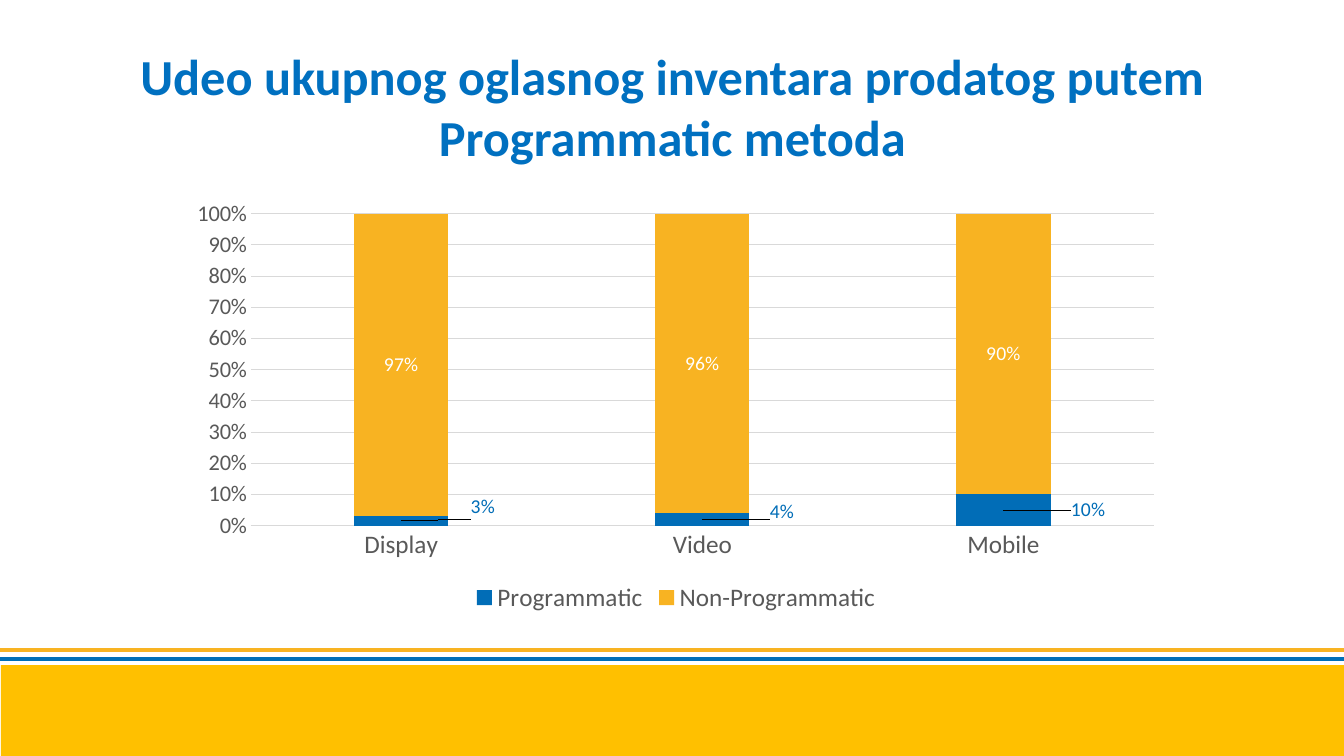
from lxml import etree
from pptx import Presentation
from pptx import util as u
from pptx.chart.data import CategoryChartData
from pptx.dml.color import RGBColor
from pptx.enum import chart as ch, shapes, text
from pptx.oxml import ns

PX = 914400 / 100.8
FONT = "Calibri"
GREY, RULE = "595959", "D9D9D9"
BLUE, GOLD = "016DB7", "F8B322"


def px(n):
    """Turn pixels into EMU."""
    return u.Emu(round(n * PX))


def rgb(value):
    """Turn a hex string into a colour."""
    return RGBColor.from_string(value)


def style(font, size, color, bold=False):
    """Set the face, size and colour of a font."""
    font.name, font.size, font.bold = FONT, u.Pt(size), bold
    font.color.rgb = rgb(color)


def add_layout(parent, index, **values):
    """Insert a manual layout into a chart element."""
    for old in parent.findall(ns.qn("c:layout")):
        parent.remove(old)
    layout = etree.Element(ns.qn("c:layout"))
    manual = etree.SubElement(layout, ns.qn("c:manualLayout"))
    for name, value in values.items():
        etree.SubElement(manual, ns.qn("c:" + name)).set("val", str(value))
    parent.insert(index, layout)


def add_title(s, x, y, w, h):
    """Place the centred heading in its box."""
    tf = s.shapes.add_textbox(px(x), px(y), px(w), px(h)).text_frame
    tf.word_wrap = True
    tf.margin_left = tf.margin_right = tf.margin_top = tf.margin_bottom = 0
    tf.vertical_anchor = text.MSO_ANCHOR.MIDDLE
    p = tf.paragraphs[0]
    p.alignment = text.PP_ALIGN.CENTER
    r = p.add_run()
    r.text = "Udeo ukupnog oglasnog inventara prodatog putem Programmatic metoda"
    style(r.font, 36, "0070C0", True)


def add_share_chart(s, x, y, w, h):
    """Place the stacked share chart in its box."""
    data = CategoryChartData(number_format="0%")
    data.categories = ["Display", "Video", "Mobile"]
    data.add_series("Programmatic", [0.03, 0.04, 0.1])
    data.add_series("Non-Programmatic", [0.97, 0.96, 0.9])
    chart = s.shapes.add_chart(ch.XL_CHART_TYPE.COLUMN_STACKED_100,
                               px(x), px(y), px(w), px(h), data).chart
    style(chart.font, 10, "000000")
    chart.has_title = False
    chart.has_legend = True
    chart.legend.position = ch.XL_LEGEND_POSITION.BOTTOM
    chart.legend.include_in_layout = False
    style(chart.legend.font, 18, GREY)

    cat, val = chart.category_axis, chart.value_axis
    for axis, size in ((cat, 18), (val, 16)):
        axis.major_tick_mark = axis.minor_tick_mark = ch.XL_TICK_MARK.NONE
        style(axis.tick_labels.font, size, GREY)
    val.minimum_scale, val.maximum_scale, val.major_unit = 0, 1, 0.1
    val.tick_labels.number_format = "0%"
    val.tick_labels.number_format_is_linked = False
    val.format.line.fill.background()
    val.has_major_gridlines = True
    for line in (cat.format.line, val.major_gridlines.format.line):
        line.color.rgb, line.width = rgb(RULE), u.Pt(0.75)

    plot = chart.plots[0]
    plot.gap_width, plot.overlap, plot.vary_by_categories = 219, 100, False
    for series, fill, color in zip(plot.series, (BLUE, GOLD), (BLUE, "FFFFFF")):
        series.format.fill.solid()
        series.format.fill.fore_color.rgb = rgb(fill)
        labels = series.data_labels
        labels.show_value = True
        labels.number_format, labels.number_format_is_linked = "0%", False
        labels.position = ch.XL_LABEL_POSITION.CENTER
        style(labels.font, 14, color)

    shifts = [(82, -14), (80, -8), (85, 0)]
    for i in range(len(shifts)):
        label = plot.series[0].points[i].data_label
        label.position = ch.XL_LABEL_POSITION.CENTER
        style(label.font, 14, BLUE)
    for node, (dx, dy) in zip(chart.element.xpath(".//c:dLbl"), shifts):
        add_layout(node, 1, x=round(dx / w, 3), y=round(dy / h, 3))
    add_layout(chart.element.xpath(".//c:plotArea")[0], 0, layoutTarget="inner",
               xMode="edge", yMode="edge", x=round(73 / w, 3),
               y=round(21 / h, 3), w=round(903 / w, 3), h=round(312 / h, 3))


def add_footer(s, x, y, w, h):
    """Place the gold band with two rules at the top of its box."""
    band = s.shapes.add_shape(shapes.MSO_SHAPE.RECTANGLE,
                              px(x + 1), px(y + 15), px(w - 1), px(h - 15))
    band.shadow.inherit = False
    band.fill.solid()
    band.fill.fore_color.rgb = rgb("FFC000")
    band.line.fill.background()
    for dy, color in ((0, GOLD), (9, "006FB7")):
        rule = s.shapes.add_connector(shapes.MSO_CONNECTOR.STRAIGHT,
                                      px(x), px(y + dy), px(x + w), px(y + dy))
        rule.line.color.rgb, rule.line.width = rgb(color), u.Pt(2.2)
        etree.SubElement(rule.element.spPr, ns.qn("a:effectLst"))


def main():
    """Build the slide and save it."""
    prs = Presentation()
    prs.slide_width, prs.slide_height = px(1344), px(756)
    s = prs.slides.add_slide(prs.slide_layouts[6])
    add_footer(s, 0, 650, 1344, 106)
    add_share_chart(s, 178, 193, 996, 425)
    add_title(s, 123, 47, 1099, 118)
    prs.save("out.pptx")


if __name__ == "__main__":
    main()
